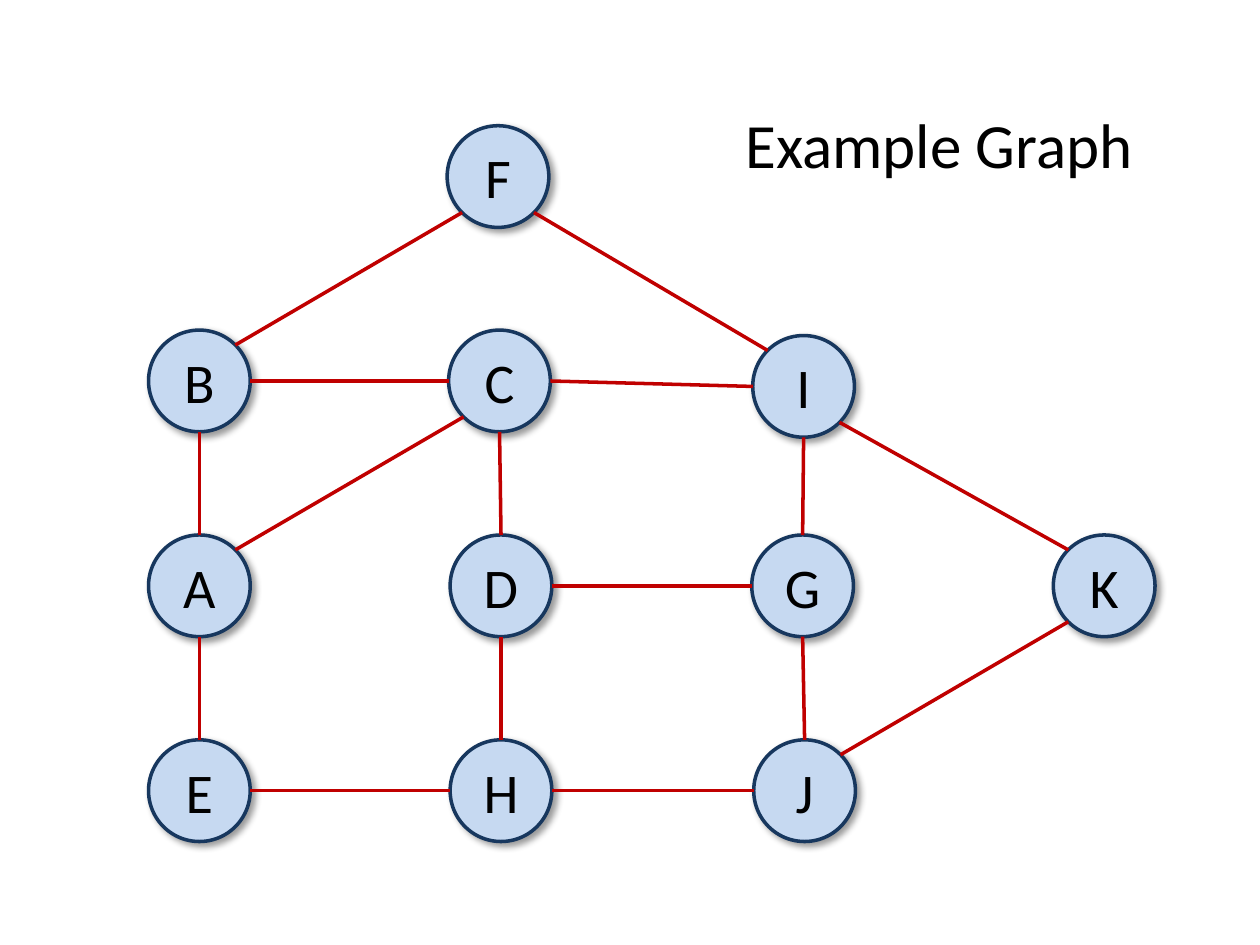
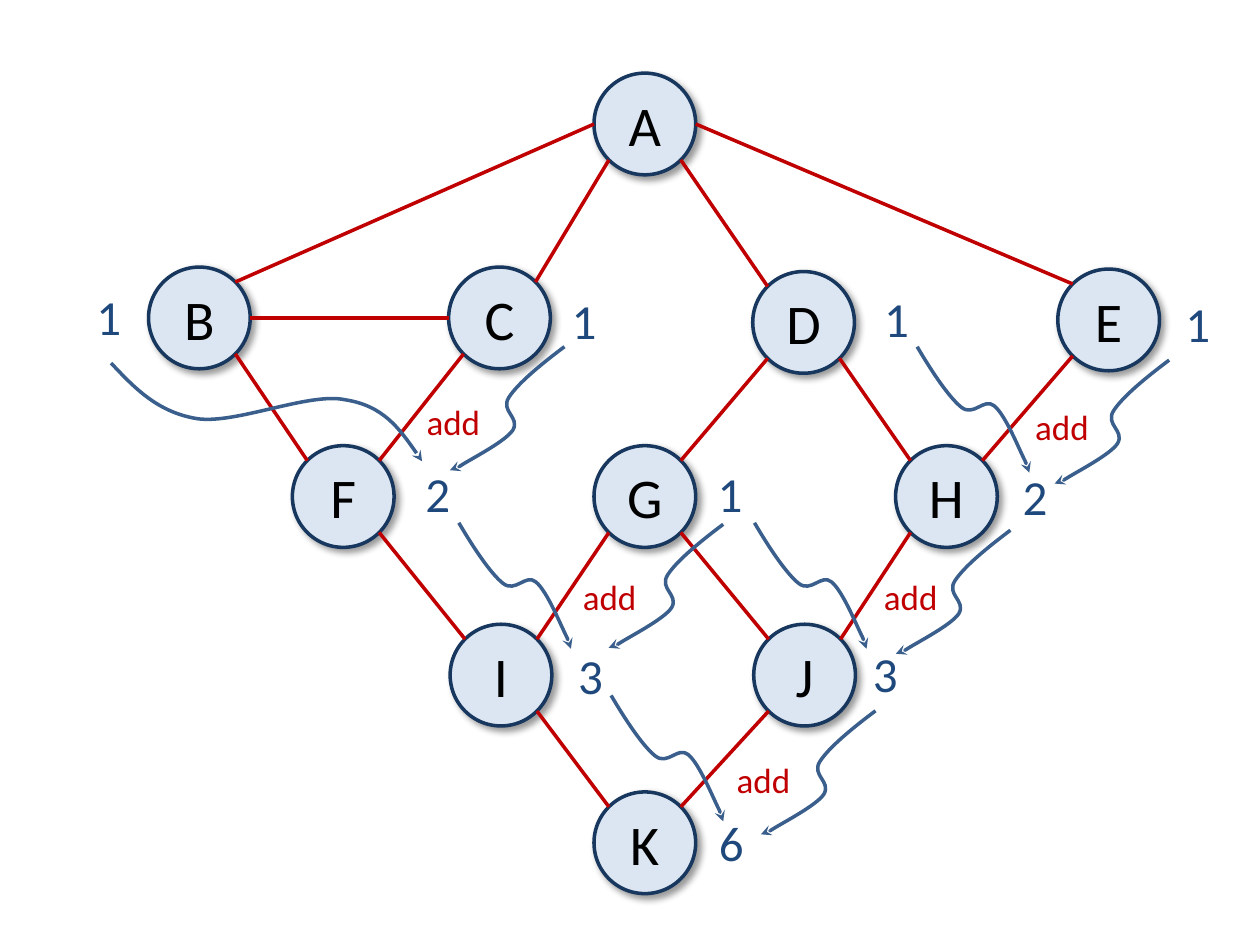
import itertools
import math

import pptx
import pptx.dml.color
import pptx.enum.shapes
import pptx.enum.text
import pptx.oxml.ns
import pptx.util
from lxml import etree

Cm, Pt = pptx.util.Cm, pptx.util.Pt
RGBColor = pptx.dml.color.RGBColor
qn = pptx.oxml.ns.qn

# Shared style
FONT = "Calibri"
BLACK = RGBColor(0x00, 0x00, 0x00)
NAVY = RGBColor(0x17, 0x37, 0x5E)
RED = RGBColor(0xC0, 0x00, 0x00)
COUNT_BLUE = RGBColor(0x1F, 0x49, 0x7D)
ARROW_BLUE = RGBColor(0x3A, 0x5F, 0x8C)
GRAPH_FILL = RGBColor(0xC6, 0xD9, 0xF1)
TREE_FILL = RGBColor(0xDC, 0xE6, 0xF2)
LINE_WIDTH = Pt(2)
NODE_SIZE = 2.05
SITE_COUNT = 8  # connection sites of an ellipse, anticlockwise from the top

# Slide 1: node centres in cm, and edges as pairs of node names
TITLE = "Example Graph"
TITLE_BOX = (14.17, 1.98, 9.53, 1.8)
GRAPH_NODES = {
    "F": (10.04, 3.56),
    "B": (4.02, 7.68), "C": (10.07, 7.68), "I": (16.2, 7.79),
    "A": (4.02, 11.81), "D": (10.1, 11.81), "G": (16.18, 11.81), "K": (22.26, 11.81),
    "E": (4.02, 15.94), "H": (10.1, 15.94), "J": (16.22, 15.94),
}
GRAPH_EDGES = "FB FI BC CI BA CA CD IG IK DG AE DH GJ KJ EH HJ".split()

# Slide 2: breadth-first levels, path counts and the additions
TREE_NODES = {
    "A": (13, 2.5),
    "B": (4.02, 6.41), "C": (10.07, 6.41), "D": (16.2, 6.5), "E": (22.35, 6.45),
    "F": (6.92, 10.01), "G": (13, 10.01), "H": (19.08, 10.01),
    "I": (10.1, 13.61), "J": (16.22, 13.61),
    "K": (13, 16.99),
}
TREE_EDGES = "AB AC AD AE BC BF CF DG DH EH FI GI GJ HJ IK JK".split()
COUNT_BOX = (1.55, 1.45)
COUNTS = [
    ("1", 1.42, 5.66), ("1", 11, 5.74), ("1", 17.3, 5.69), ("1", 23.37, 5.79),
    ("2", 8.05, 9.22), ("1", 13.94, 9.22), ("2", 20.09, 9.27),
    ("3", 11.13, 12.88), ("3", 17.07, 12.85), ("6", 13.97, 16.26),
]
ADD_BOX = (2.18, 1.12)
ADDITIONS = [
    ("add", 8.05, 7.95), ("add", 20.32, 8.05),
    ("add", 11.2, 11.48), ("add", 17.27, 11.48), ("add", 14.3, 15.16),
]

# Bezier points relative to the arrow's tail, three per segment
SWOOP = [
    (0.48, 0.51), (0.94, 0.99), (1.73, 1.12),
    (2.51, 1.24), (3.99, 0.58), (4.72, 0.74),
    (5.49, 0.86), (5.89, 1.42), (6.27, 1.98),
]
RIGHTWARD = [
    (0.3, 0.51), (0.64, 1.02), (0.89, 1.22),
    (1.14, 1.42), (1.35, 1.02), (1.55, 1.19),
    (1.78, 1.37), (2.06, 2.08), (2.18, 2.31),
    (2.21, 2.39), (2.24, 2.46), (2.26, 2.54),
]
LEFTWARD = [
    (-0.48, 0.36), (-0.94, 0.74), (-1.12, 1.02),
    (-1.3, 1.3), (-0.89, 1.42), (-1.04, 1.68),
    (-1.19, 1.91), (-1.88, 2.26), (-2.08, 2.39),
    (-2.16, 2.44), (-2.24, 2.46), (-2.31, 2.49),
]
ARROWS = [
    (SWOOP, [(2.24, 7.32)]),
    (RIGHTWARD, [(18.49, 6.99), (9.25, 10.54), (15.21, 10.54), (12.32, 14.02)]),
    (LEFTWARD, [(23.57, 7.26), (11.38, 6.99), (14.58, 10.57), (20.37, 10.69), (17.65, 14.33)]),
]


def write(frame, text, size, color):
    """Put one centred line of text into a text frame."""
    para = frame.paragraphs[0]
    para.alignment = pptx.enum.text.PP_ALIGN.CENTER
    span = para.add_run()
    span.text = text
    span.font.name = FONT
    span.font.size = Pt(size)
    span.font.color.rgb = color


def set_line(shape, color):
    shape.line.color.rgb = color
    shape.line.width = LINE_WIDTH


def add_node(page, name, center, fill):
    left, top = (value - NODE_SIZE / 2 for value in center)
    node = page.shapes.add_shape(
        pptx.enum.shapes.MSO_SHAPE.OVAL, Cm(left), Cm(top), Cm(NODE_SIZE), Cm(NODE_SIZE))
    node.fill.solid()
    node.fill.fore_color.rgb = fill
    set_line(node, NAVY)

    # Soft shadow towards the lower right
    node.shadow.inherit = False
    effects = node._element.spPr.find(qn("a:effectLst"))
    shadow = etree.SubElement(
        effects, qn("a:outerShdw"), blurRad=str(Pt(4)), dist=str(Pt(3)),
        dir=str(45 * 60000), algn="tl", rotWithShape="0")
    tint = etree.SubElement(shadow, qn("a:srgbClr"), val=str(BLACK))
    etree.SubElement(tint, qn("a:alpha"), val="40000")

    frame = node.text_frame
    frame.word_wrap = False
    frame.margin_left = frame.margin_right = 0
    frame.vertical_anchor = pptx.enum.text.MSO_ANCHOR.MIDDLE
    write(frame, name, 32, BLACK)
    return node


def site_point(center, site):
    angle = 2 * math.pi * site / SITE_COUNT
    radius = NODE_SIZE / 2
    return center[0] - radius * math.sin(angle), center[1] - radius * math.cos(angle)


def add_edge(page, nodes, centers, edge):
    """Join two nodes at their closest pair of connection sites."""
    first, second = edge
    sites = min(
        itertools.product(range(SITE_COUNT), repeat=2),
        key=lambda pair: math.dist(site_point(centers[first], pair[0]),
                                   site_point(centers[second], pair[1])))
    ends = [site_point(centers[name], site) for name, site in zip(edge, sites)]
    line = page.shapes.add_connector(
        pptx.enum.shapes.MSO_CONNECTOR.STRAIGHT,
        *(Cm(value) for point in ends for value in point))
    set_line(line, RED)
    etree.SubElement(line._element.spPr, qn("a:effectLst"))
    joints = line._element.xpath("./p:nvCxnSpPr/p:cNvCxnSpPr")[0]
    for tag, name, site in zip(("a:stCxn", "a:endCxn"), edge, sites):
        etree.SubElement(joints, qn(tag), id=str(nodes[name].shape_id), idx=str(site))


def add_network(page, centers, edges, fill):
    nodes = {name: add_node(page, name, center, fill) for name, center in centers.items()}
    for edge in edges:
        add_edge(page, nodes, centers, edge)


def add_labels(page, labels, box_size, size, color):
    for text, left, top in labels:
        box = page.shapes.add_textbox(*(Cm(value) for value in (left, top, *box_size)))
        box.text_frame.word_wrap = True
        write(box.text_frame, text, size, color)


def add_curved_arrow(page, tail, offsets):
    points = [(Cm(tail[0] + across), Cm(tail[1] + down)) for across, down in offsets]
    builder = page.shapes.build_freeform(Cm(tail[0]), Cm(tail[1]))
    builder.add_line_segments(points, close=False)
    arrow = builder.convert_to_shape()
    arrow.fill.background()
    arrow.shadow.inherit = False
    set_line(arrow, ARROW_BLUE)

    # Turn every three straight steps into one Bezier segment
    steps = arrow._element.xpath(".//a:lnTo")
    outline = steps[0].getparent()
    for start in range(0, len(steps), 3):
        curve = etree.SubElement(outline, qn("a:cubicBezTo"))
        for step in steps[start:start + 3]:
            curve.append(step[0])
            outline.remove(step)
    etree.SubElement(arrow._element.xpath(".//a:ln")[0], qn("a:tailEnd"), type="stealth")


def build_graph_slide(deck):
    page = deck.slides.add_slide(deck.slide_layouts[5])
    title = page.shapes.title
    title.left, title.top, title.width, title.height = (Cm(value) for value in TITLE_BOX)
    title.text_frame.auto_size = pptx.enum.text.MSO_AUTO_SIZE.NONE
    write(title.text_frame, TITLE, 36, BLACK)
    add_network(page, GRAPH_NODES, GRAPH_EDGES, GRAPH_FILL)


def build_counting_slide(deck):
    page = deck.slides.add_slide(deck.slide_layouts[6])
    add_network(page, TREE_NODES, TREE_EDGES, TREE_FILL)
    add_labels(page, COUNTS, COUNT_BOX, 28, COUNT_BLUE)
    for offsets, tails in ARROWS:
        for tail in tails:
            add_curved_arrow(page, tail, offsets)
    add_labels(page, ADDITIONS, ADD_BOX, 20, RED)


def main():
    deck = pptx.Presentation()
    deck.slide_width, deck.slide_height = Cm(25.4), Cm(19.05)
    build_graph_slide(deck)
    build_counting_slide(deck)
    deck.save("out.pptx")


if __name__ == "__main__":
    main()
